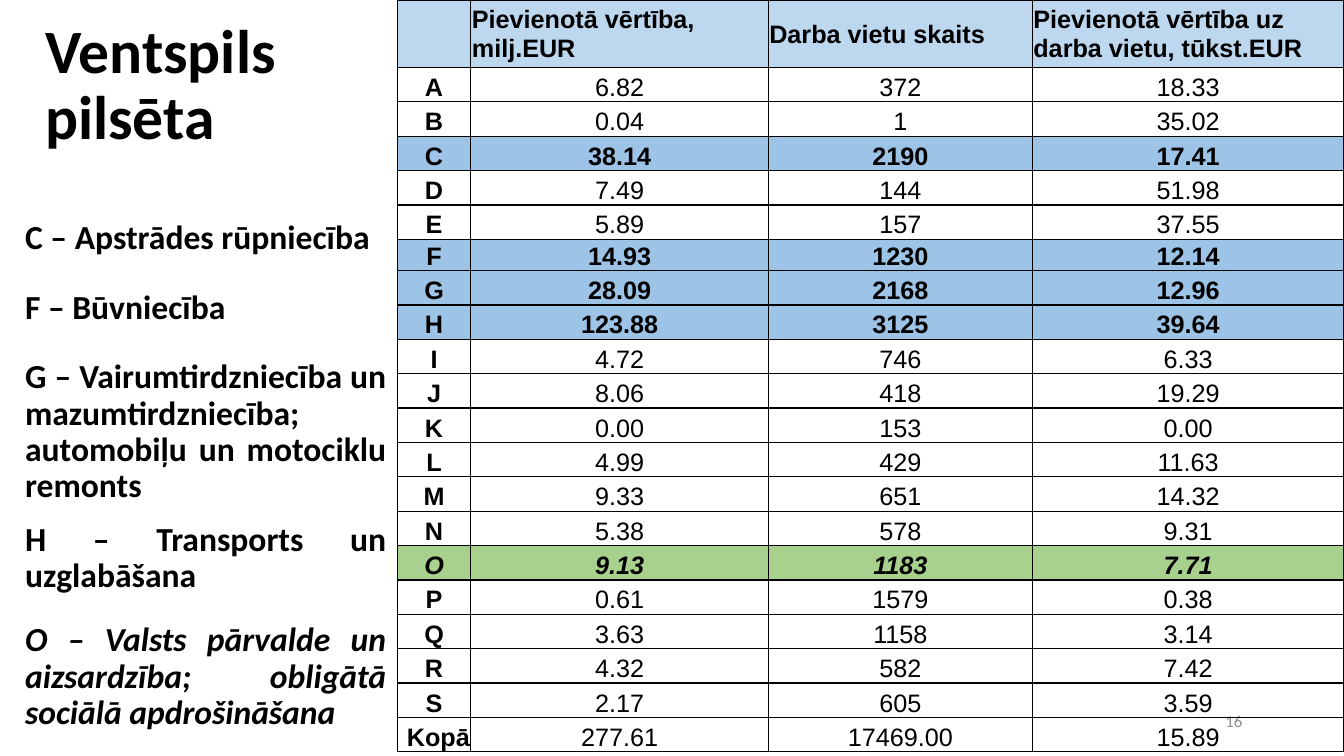
import pptx
import pptx.dml.color
import pptx.enum.text
import pptx.oxml
import pptx.oxml.ns
import pptx.util

ALIGN = pptx.enum.text.PP_ALIGN
ANCHOR = pptx.enum.text.MSO_ANCHOR

COLORS = {
    "ink": "000000",
    "number": "8C8C8C",
    "header": "BDD7EE",
    "leading": "9DC3E6",
    "public": "A9D18E",
}

HEADINGS = ["", "Pievienotā vērtība, milj.EUR", "Darba vietu skaits",
            "Pievienotā vērtība uz darba vietu, tūkst.EUR"]
SECTORS = [
    ("A", "6.82", "372", "18.33"),
    ("B", "0.04", "1", "35.02"),
    ("C", "38.14", "2190", "17.41"),
    ("D", "7.49", "144", "51.98"),
    ("E", "5.89", "157", "37.55"),
    ("F", "14.93", "1230", "12.14"),
    ("G", "28.09", "2168", "12.96"),
    ("H", "123.88", "3125", "39.64"),
    ("I", "4.72", "746", "6.33"),
    ("J", "8.06", "418", "19.29"),
    ("K", "0.00", "153", "0.00"),
    ("L", "4.99", "429", "11.63"),
    ("M", "9.33", "651", "14.32"),
    ("N", "5.38", "578", "9.31"),
    ("O", "9.13", "1183", "7.71"),
    ("P", "0.61", "1579", "0.38"),
    ("Q", "3.63", "1158", "3.14"),
    ("R", "4.32", "582", "7.42"),
    ("S", "2.17", "605", "3.59"),
    ("Kopā", "277.61", "17469.00", "15.89"),
]
HIGHLIGHTS = {"C": "leading", "F": "leading", "G": "leading", "H": "leading", "O": "public"}
COLUMN_SHARES = [5.48, 22.13, 19.65, 23.18]
HEADER_SHARE, SECTOR_SHARE, TIGHT_SHARE = 8.93, 4.55, 4

LEGEND = [
    ("C – Apstrādes rūpniecība", 28.53, 7.73),
    ("F – Būvniecība", 37.73, 7.73),
    ("G – Vairumtirdzniecība un mazumtirdzniecība; automobiļu un motociklu remonts", 46.93, 21.47),
    ("H – Transports un uzglabāšana", 68.4, 13.33),
    ("O – Valsts pārvalde un aizsardzība; obligātā sociālā apdrošināšana", 81.73, 13.33),
]


class SectorSlide:
    def __init__(self, deck):
        self.deck = deck
        self.slide = deck.slides.add_slide(deck.slide_layouts[6])

    def across(self, percent):
        return round(self.deck.slide_width * percent / 100)

    def down(self, percent):
        return round(self.deck.slide_height * percent / 100)

    def style(self, frame, font, size, color="ink", bold=False, italic=False,
              align=ALIGN.LEFT, spacing=None):
        for paragraph in frame.paragraphs:
            paragraph.alignment = align
            if spacing:
                paragraph.line_spacing = spacing
            for run in paragraph.runs:
                run.font.name = font
                run.font.size = pptx.util.Pt(size)
                run.font.bold = bold
                run.font.italic = italic
                run.font.color.rgb = pptx.dml.color.RGBColor.from_string(COLORS[color])

    def text(self, words, left, top, width, height, size, anchor=ANCHOR.TOP, **look):
        frame = self.slide.shapes.add_textbox(
            self.across(left), self.down(top), self.across(width), self.down(height)).text_frame
        frame.word_wrap = True
        frame.vertical_anchor = anchor
        frame.text = words
        self.style(frame, "Calibri", size, **look)

    def borders(self, cell):
        properties = cell._tc.get_or_add_tcPr()
        for side in ("lnL", "lnR", "lnT", "lnB"):
            properties.append(pptx.oxml.parse_xml(
                f'<a:{side} {pptx.oxml.ns.nsdecls("a")} w="12700"><a:solidFill>'
                f'<a:srgbClr val="{COLORS["ink"]}"/></a:solidFill></a:{side}>'))

    def cell(self, cell, words, fill=None, anchor=ANCHOR.BOTTOM, **look):
        cell.margin_left = cell.margin_right = cell.margin_top = pptx.util.Inches(0.01)
        cell.margin_bottom = 0
        cell.vertical_anchor = anchor
        self.borders(cell)
        if fill:
            cell.fill.solid()
            cell.fill.fore_color.rgb = pptx.dml.color.RGBColor.from_string(COLORS[fill])
        else:
            cell.fill.background()
        cell.text_frame.text = words
        self.style(cell.text_frame, "Arial", 18, **look)

    def sector_table(self, left, top):
        row_shares = [HEADER_SHARE] + [
            TIGHT_SHARE if sector[0] == "F" else SECTOR_SHARE for sector in SECTORS]
        table = self.slide.shapes.add_table(
            len(row_shares), len(COLUMN_SHARES), self.across(left), self.down(top),
            self.across(sum(COLUMN_SHARES)), self.down(sum(row_shares))).table
        table.first_row = table.horz_banding = False
        for column, share in zip(table.columns, COLUMN_SHARES):
            column.width = self.across(share)
        for row, share in zip(table.rows, row_shares):
            row.height = self.down(share)
        for c, heading in enumerate(HEADINGS):
            self.cell(table.cell(0, c), heading, "header", ANCHOR.MIDDLE, bold=True)
        for r, sector in enumerate(SECTORS, 1):
            highlight = HIGHLIGHTS.get(sector[0])
            for c, value in enumerate(sector):
                self.cell(table.cell(r, c), value, highlight,
                          bold=c == 0 or highlight is not None,
                          italic=highlight == "public",
                          align=ALIGN.RIGHT if value == "Kopā" else ALIGN.CENTER)


def main():
    deck = pptx.Presentation()
    deck.slide_width = pptx.util.Inches(13.33)
    deck.slide_height = pptx.util.Inches(7.5)
    page = SectorSlide(deck)
    page.text("16", 70.67, 92.67, 22.5, 5.33, 12, ANCHOR.MIDDLE,
              color="number", align=ALIGN.RIGHT)
    page.sector_table(29.56, 0)
    page.text("Ventspils\npilsēta", 2.63, 2, 33.83, 11.33, 44, bold=True, spacing=0.9)
    for meaning, top, height in LEGEND:
        page.text(meaning, 1.13, top, 28.36, height, 24, bold=True,
                  italic=meaning.startswith("O"), align=ALIGN.JUSTIFY, spacing=0.9)
    deck.save("out.pptx")


if __name__ == "__main__":
    main()
